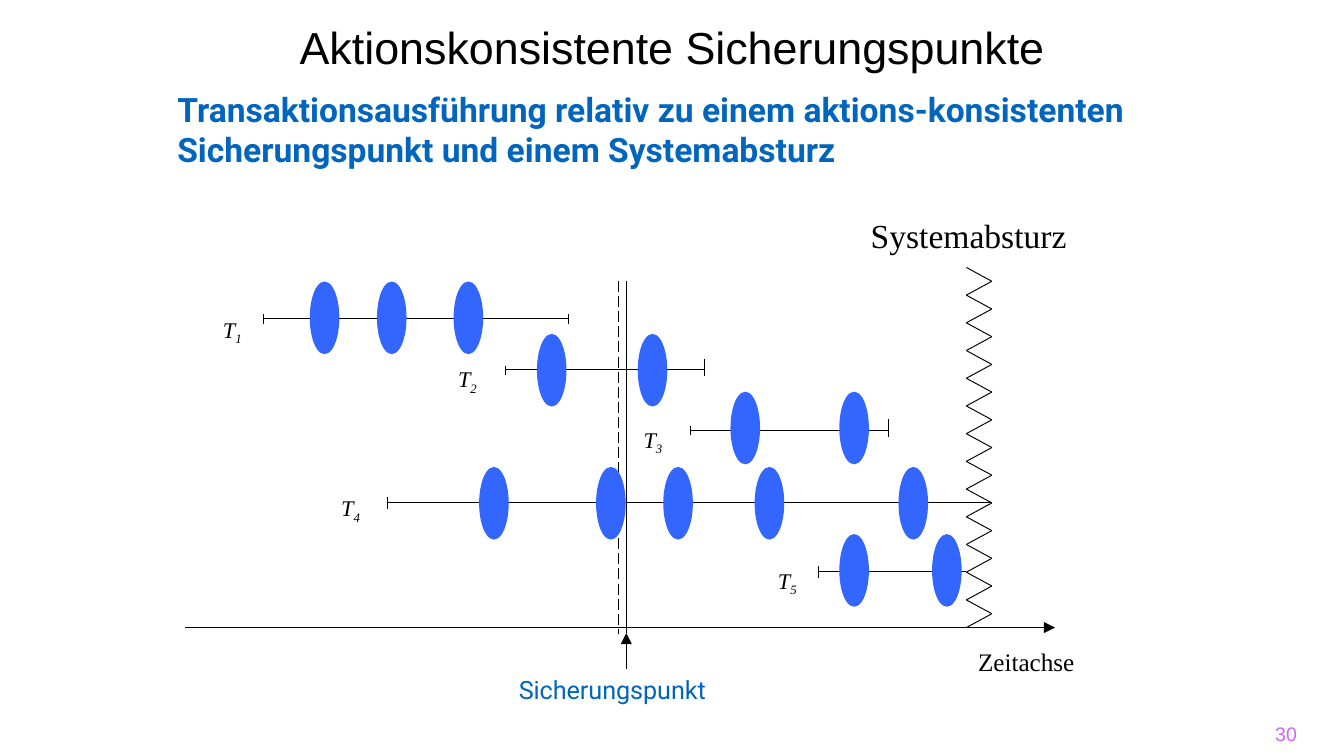
from collections import namedtuple

from lxml import etree
from pptx import Presentation
from pptx.dml.color import RGBColor
from pptx.enum.dml import MSO_LINE
from pptx.enum.shapes import MSO_CONNECTOR, MSO_SHAPE
from pptx.enum.text import MSO_ANCHOR, MSO_AUTO_SIZE, PP_ALIGN
from pptx.oxml.ns import qn
from pptx.util import Inches, Pt

BLACK = RGBColor(0x00, 0x00, 0x00)
ACTION_BLUE = RGBColor(0x33, 0x66, 0xFF)
HEADING_BLUE = RGBColor(0x00, 0x65, 0xBD)
PAGE_VIOLET = RGBColor(0xCC, 0x66, 0xFF)
STRAIGHT = MSO_CONNECTOR.STRAIGHT
OVAL = MSO_SHAPE.OVAL
LONG_DASH = MSO_LINE.LONG_DASH
TOP, MIDDLE = MSO_ANCHOR.TOP, MSO_ANCHOR.MIDDLE
LEFT, CENTER, RIGHT = PP_ALIGN.LEFT, PP_ALIGN.CENTER, PP_ALIGN.RIGHT
FIT_SHAPE, NO_FIT = MSO_AUTO_SIZE.SHAPE_TO_FIT_TEXT, MSO_AUTO_SIZE.NONE
SANS, SERIF, ROBOTO = "Arial", "Times New Roman", "Roboto"

ACTION_WIDTH, ACTION_HEIGHT = 0.21, 0.53
CRASH_LEFT, CRASH_RIGHT = 7.19, 7.38
CRASH_TOP, AXIS_Y = 1.99, 4.67
CRASH_STROKES = 26
SMALL_TICK, MEDIUM_TICK, LONG_TICK = (0.03, 0.04), (0.04, 0.05), (0.08, 0.05)

Transaction = namedtuple(
    "Transaction",
    "label_left label_top y start end start_tick end_tick action_top actions")
TRANSACTIONS = [
    Transaction(1.56, 2.30, 2.37, 1.96, 4.23, SMALL_TICK, SMALL_TICK,
                2.10, [2.31, 2.81, 3.38]),
    Transaction(3.31, 2.67, 2.75, 3.76, 5.24, SMALL_TICK, LONG_TICK,
                2.49, [4.00, 4.75]),
    Transaction(4.69, 3.12, 3.20, 5.14, 6.61, SMALL_TICK, LONG_TICK,
                2.92, [5.44, 6.25]),
    Transaction(2.44, 3.63, 3.74, 2.88, 7.37, MEDIUM_TICK, None,
                3.48, [3.57, 4.44, 4.94, 5.62, 6.69]),
    Transaction(5.69, 4.17, 4.25, 6.09, 7.19, MEDIUM_TICK, None,
                3.98, [6.25, 6.94]),
]


class SlideBuilder:
    def __init__(self, slide):
        self.slide = slide

    def style(self, paragraph, font, size, color, bold=False, italic=False):
        for run in paragraph.runs:
            run.font.name = font
            run.font.size = Pt(size)
            run.font.color.rgb = color
            run.font.bold = bold
            run.font.italic = italic

    def title(self, wording, left, top, width, height):
        title = self.slide.shapes.title
        title.left, title.top = Inches(left), Inches(top)
        title.width, title.height = Inches(width), Inches(height)
        frame = title.text_frame
        frame.text = wording
        frame.word_wrap = True
        frame.auto_size = NO_FIT
        frame.vertical_anchor = TOP
        heading = frame.paragraphs[0]
        heading.alignment = CENTER
        heading.line_spacing = 1.25
        self.style(heading, SANS, 24, BLACK)

    def text(self, wording, left, top, width, height, font, size, color,
             bold=False, align=LEFT, anchor=TOP, fit=FIT_SHAPE,
             margins=(0.1, 0.05)):
        box = self.slide.shapes.add_textbox(
            Inches(left), Inches(top), Inches(width), Inches(height))
        frame = box.text_frame
        frame.text = wording
        frame.word_wrap = True
        frame.auto_size = fit
        frame.vertical_anchor = anchor
        frame.margin_left = frame.margin_right = Inches(margins[0])
        frame.margin_top = frame.margin_bottom = Inches(margins[1])
        frame.paragraphs[0].alignment = align
        self.style(frame.paragraphs[0], font, size, color, bold)
        return box

    def transaction_label(self, number, left, top):
        box = self.text("T", left, top, 0.5, 0.3, SERIF, 12, BLACK)
        label = box.text_frame.paragraphs[0]
        index = label.add_run()
        index.text = str(number)
        self.style(label, SERIF, 12, BLACK, italic=True)
        index._r.get_or_add_rPr().set("baseline", "-25000")

    def line(self, x1, y1, x2, y2, weight=0.5, dash=None, arrow=False):
        connector = self.slide.shapes.add_connector(
            STRAIGHT, Inches(x1), Inches(y1), Inches(x2), Inches(y2))
        connector.line.color.rgb = BLACK
        connector.line.width = Pt(weight)
        if dash is not None:
            connector.line.dash_style = dash
        if arrow:
            etree.SubElement(connector.line._get_or_add_ln(),
                             qn("a:tailEnd"), type="triangle")
        etree.SubElement(connector._element.spPr, qn("a:effectLst"))
        return connector

    def tick(self, x, y, extent):
        above, below = extent
        self.line(x, y - above, x, y + below)

    def action(self, left, top):
        oval = self.slide.shapes.add_shape(
            OVAL, Inches(left), Inches(top),
            Inches(ACTION_WIDTH), Inches(ACTION_HEIGHT))
        oval.shadow.inherit = False
        oval.fill.solid()
        oval.fill.fore_color.rgb = ACTION_BLUE
        oval.line.color.rgb = ACTION_BLUE
        oval.line.width = Pt(0.75)

    def crash(self):
        step = (AXIS_Y - CRASH_TOP) / CRASH_STROKES
        sides = (CRASH_LEFT, CRASH_RIGHT)
        for stroke in range(CRASH_STROKES):
            y = CRASH_TOP + stroke * step
            self.line(sides[stroke % 2], y, sides[(stroke + 1) % 2], y + step)

    def transaction_span(self, number, transaction):
        t = transaction
        self.transaction_label(number, t.label_left, t.label_top)
        self.line(t.start, t.y, t.end, t.y)
        self.tick(t.start, t.y, t.start_tick)
        if t.end_tick:
            self.tick(t.end, t.y, t.end_tick)


def main():
    presentation = Presentation()
    presentation.slide_width = Inches(10)
    presentation.slide_height = Inches(10 * 9 / 16)
    builder = SlideBuilder(
        presentation.slides.add_slide(presentation.slide_layouts[5]))

    builder.title("Aktionskonsistente Sicherungspunkte", 1.25, 0, 7.5, 0.5)
    builder.text("Transaktionsausführung relativ zu einem aktions-konsistenten "
                 "Sicherungspunkt und einem Systemabsturz",
                 1.25, 0.62, 7.5, 0.68, ROBOTO, 18, HEADING_BLUE, bold=True,
                 margins=(0.07, 0.04))
    builder.text("30", 7.41, 5.31, 2.24, 0.3, SANS, 10.5, PAGE_VIOLET,
                 align=RIGHT, anchor=MIDDLE, fit=NO_FIT, margins=(0, 0.05))

    builder.line(1.38, AXIS_Y, 7.85, AXIS_Y, arrow=True)
    builder.text("Zeitachse", 7.18, 4.76, 1, 0.33, SERIF, 13.5, BLACK)
    builder.text("Systemabsturz", 6.38, 1.55, 1.69, 0.4, SERIF, 18, BLACK)
    builder.crash()

    for number, transaction in enumerate(TRANSACTIONS, start=1):
        builder.transaction_span(number, transaction)

    builder.line(4.6, 2.09, 4.6, 4.72, weight=0.75, dash=LONG_DASH)
    builder.line(4.66, 2.09, 4.66, 4.71, weight=0.75)
    checkpoint = builder.text("Sicherungspunkt", 3.79, 4.98, 1.74, 0.3, ROBOTO,
                              13.5, HEADING_BLUE, margins=(0.07, 0.04))
    checkpoint_arrow = builder.line(4.66, 4.98, 4.66, 4.71, weight=0.75,
                                    arrow=True)
    checkpoint_arrow.begin_connect(checkpoint, 0)

    for transaction in TRANSACTIONS:
        for left in transaction.actions:
            builder.action(left, transaction.action_top)

    presentation.save("out.pptx")


if __name__ == "__main__":
    main()
